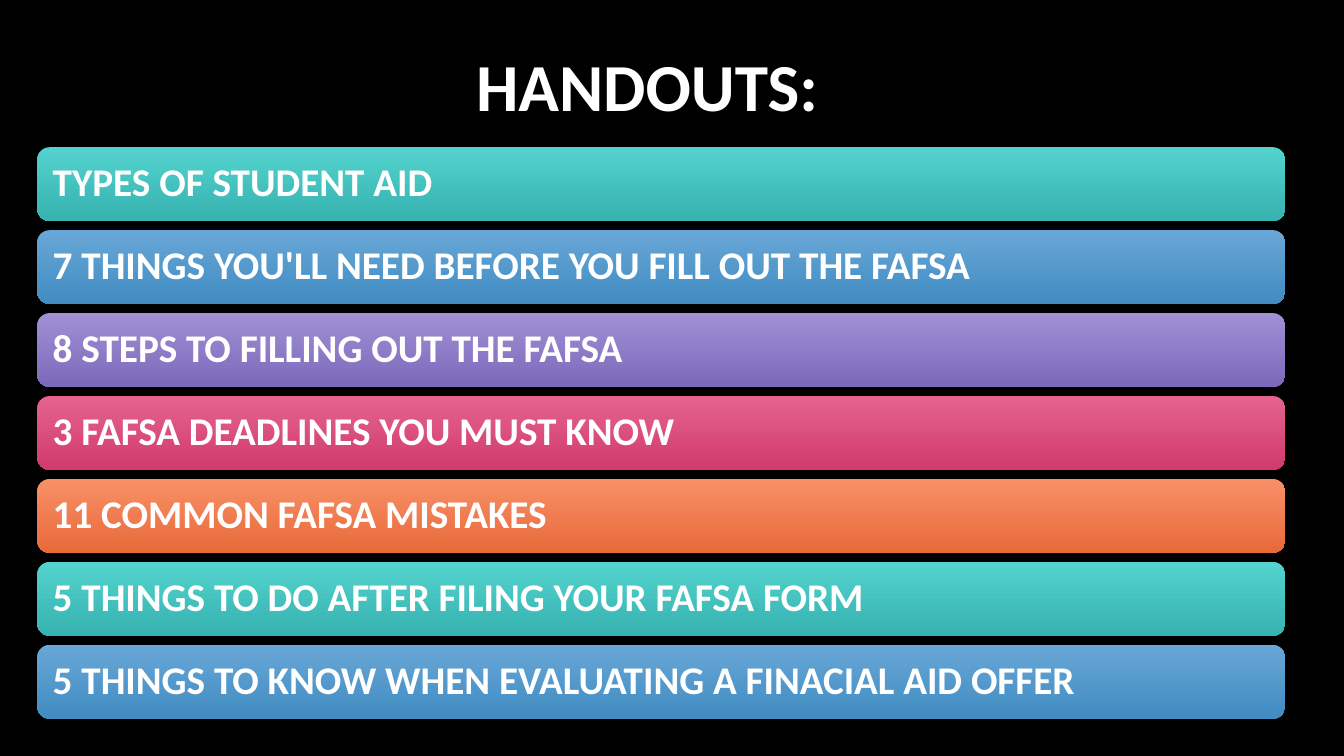
from typing import NamedTuple

import pptx
import pptx.dml.color
import pptx.enum.shapes
import pptx.enum.text
import pptx.slide
import pptx.text.text
import pptx.util

Cm = pptx.util.Cm
RGBColor = pptx.dml.color.RGBColor

BLACK = RGBColor(0x00, 0x00, 0x00)
WHITE = RGBColor(0xFF, 0xFF, 0xFF)


class Gradient(NamedTuple):
    top: RGBColor
    bottom: RGBColor


TEAL = Gradient(RGBColor(0x53, 0xD2, 0xCE), RGBColor(0x37, 0xB3, 0xB0))
BLUE = Gradient(RGBColor(0x68, 0xA7, 0xD7), RGBColor(0x41, 0x8C, 0xC2))
PURPLE = Gradient(RGBColor(0xA0, 0x90, 0xD4), RGBColor(0x7D, 0x69, 0xBB))
PINK = Gradient(RGBColor(0xE5, 0x63, 0x8E), RGBColor(0xD1, 0x3A, 0x6D))
ORANGE = Gradient(RGBColor(0xF9, 0x90, 0x68), RGBColor(0xE7, 0x6A, 0x39))


class Handout(NamedTuple):
    title: str
    gradient: Gradient


HANDOUTS = [
    Handout("TYPES OF STUDENT AID", TEAL),
    Handout("7 THINGS YOU'LL NEED BEFORE YOU FILL OUT THE FAFSA", BLUE),
    Handout("8 STEPS TO FILLING OUT THE FAFSA", PURPLE),
    Handout("3 FAFSA DEADLINES YOU MUST KNOW", PINK),
    Handout("11 COMMON FAFSA MISTAKES", ORANGE),
    Handout("5 THINGS TO DO AFTER FILING YOUR FAFSA FORM", TEAL),
    Handout("5 THINGS TO KNOW WHEN EVALUATING A FINACIAL AID OFFER", BLUE),
]

# Bar layout in centimetres
BAR_LEFT, BAR_TOP = 0.94, 3.71
BAR_WIDTH, BAR_HEIGHT = 31.45, 1.86
BAR_PITCH = 2.09
BAR_INSET = 0.3


def set_text(tf: pptx.text.text.TextFrame, text: str, size: int,
             align: pptx.enum.text.PP_ALIGN) -> None:
    tf.text = text
    tf.word_wrap = True
    tf.vertical_anchor = pptx.enum.text.MSO_ANCHOR.MIDDLE
    p = tf.paragraphs[0]
    p.alignment = align
    p.line_spacing = 0.9
    font = p.runs[0].font
    font.name = "Calibri"
    font.size = pptx.util.Pt(size)
    font.bold = True
    font.color.rgb = WHITE


def add_bar(s: pptx.slide.Slide, handout: Handout, top: float) -> None:
    sp = s.shapes.add_shape(
        pptx.enum.shapes.MSO_SHAPE.ROUNDED_RECTANGLE,
        Cm(BAR_LEFT), Cm(top), Cm(BAR_WIDTH), Cm(BAR_HEIGHT))
    sp.shadow.inherit = False
    sp.line.fill.background()
    sp.fill.gradient()
    sp.fill.gradient_angle = 270
    for stop, color, position in zip(sp.fill.gradient_stops, handout.gradient, (0, 1)):
        stop.color.rgb = color
        stop.position = position
    tf = sp.text_frame
    tf.margin_left = tf.margin_right = Cm(BAR_INSET)
    tf.margin_top = tf.margin_bottom = Cm(BAR_INSET)
    set_text(tf, handout.title, 28, pptx.enum.text.PP_ALIGN.LEFT)


def main() -> None:
    prs = pptx.Presentation()
    prs.slide_width, prs.slide_height = Cm(33.87), Cm(19.05)
    s = prs.slides.add_slide(prs.slide_layouts[5])
    s.background.fill.solid()
    s.background.fill.fore_color.rgb = BLACK

    # Title
    title = s.shapes.title
    title.left, title.top = Cm(2.24), Cm(0.25)
    title.width, title.height = Cm(28.14), Cm(4.04)
    set_text(title.text_frame, "HANDOUTS:", 48, pptx.enum.text.PP_ALIGN.CENTER)

    # Handout bars
    for i, handout in enumerate(HANDOUTS):
        add_bar(s, handout, BAR_TOP + i * BAR_PITCH)

    prs.save("out.pptx")


if __name__ == "__main__":
    main()
